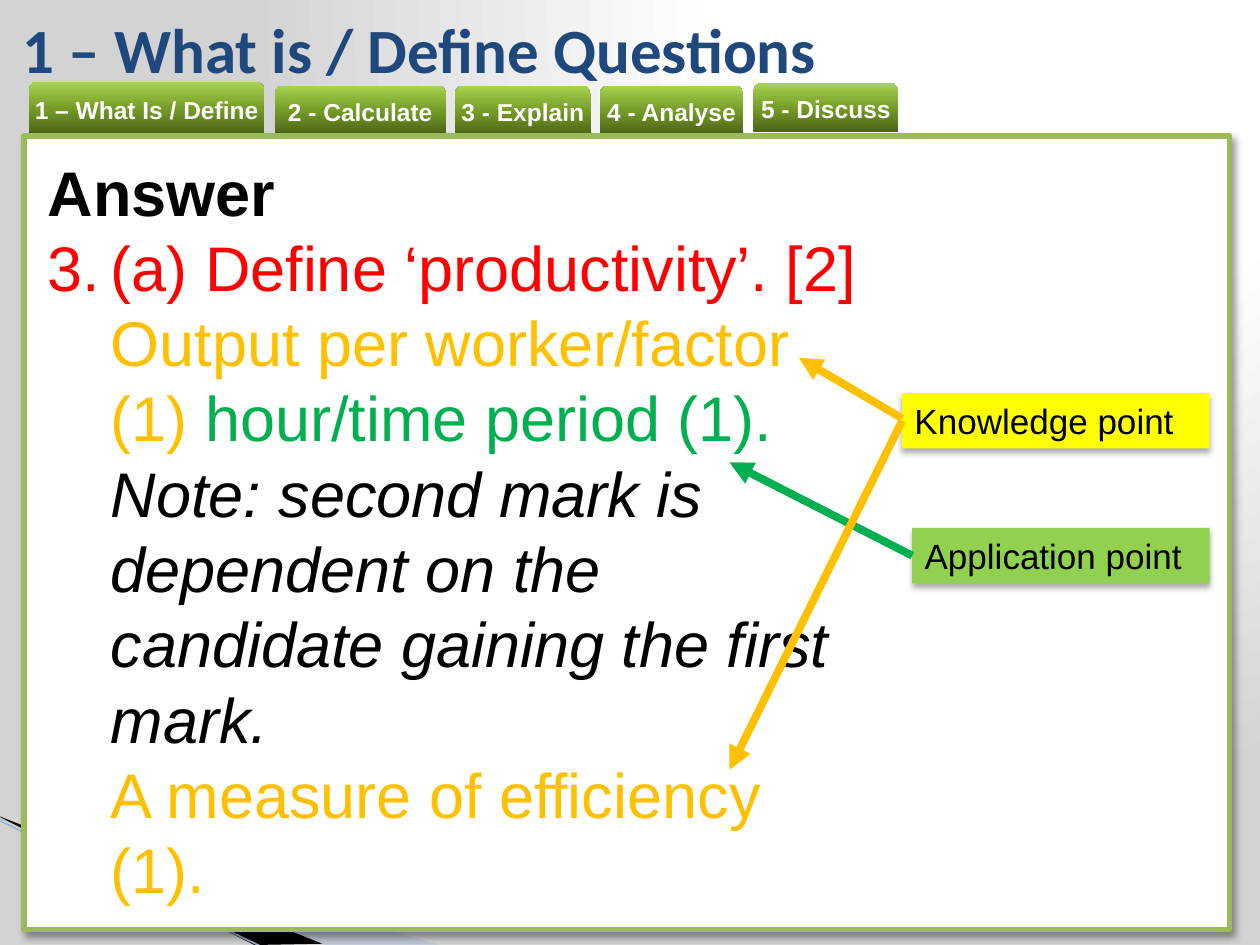
from lxml.etree import SubElement
from pptx import Presentation
from pptx.dml.color import RGBColor
from pptx.enum.shapes import MSO_CONNECTOR, MSO_SHAPE
from pptx.enum.text import MSO_ANCHOR, MSO_AUTO_SIZE, PP_ALIGN
from pptx.oxml.ns import qn
from pptx.util import Inches, Pt

WHITE = RGBColor(0xFF, 0xFF, 0xFF)
BLACK = RGBColor(0, 0, 0)
RED = RGBColor(0xFF, 0, 0)
AMBER = RGBColor(0xFF, 0xC0, 0)
GREEN = RGBColor(0, 0xB0, 0x50)
YELLOW = RGBColor(0xFF, 0xFF, 0)
LIME = RGBColor(0x92, 0xD0, 0x50)
BORDER = RGBColor(0x9B, 0xBB, 0x59)
NAVY = RGBColor(0x1F, 0x49, 0x7D)
PALE_BLUE = RGBColor(0xA7, 0xB9, 0xDB)
EDGE_BLUE = RGBColor(0x9E, 0xB3, 0xD6)
GREY = RGBColor(0xD3, 0xD3, 0xD3)
TAB_STOPS = [(0, RGBColor(0x4A, 0x63, 0x16)), (50, RGBColor(0x76, 0x9C, 0x27)),
             (70, RGBColor(0x89, 0xB1, 0x37)), (100, RGBColor(0xA9, 0xD6, 0x51))]
BACK_STOPS = [(0, WHITE), (40, WHITE), (100, GREY)]

TABS = [("1 – What Is / Define", 0.23, 0.65, 1.87, 0.42),
        ("2 - Calculate", 2.18, 0.68, 1.36, 0.39),
        ("3 - Explain", 3.61, 0.68, 1.08, 0.4),
        ("4 - Analyse", 4.76, 0.68, 1.14, 0.39),
        ("5 - Discuss", 5.98, 0.66, 1.15, 0.39)]
ANSWER = [[("(a) Define ‘productivity’. [2]", RED, False)],
          [("Output per worker/factor (1) ", AMBER, False),
           ("hour/time period (1).", GREEN, False)],
          [("Note: second mark is dependent on the candidate gaining the first mark.",
            BLACK, True)],
          [("A measure of efficiency (1).", AMBER, False)]]
CALLOUTS = [("Knowledge point", 7.16, 3.12, 2.44, YELLOW),
            ("Application point", 7.24, 4.19, 2.36, LIME)]
ARROWS = [((7.16, 3.32), (6.34, 2.84), AMBER),
          ((7.24, 4.41), (5.79, 3.67), GREEN),
          ((7.16, 3.34), (5.79, 6.11), AMBER)]


def set_gradient(fill, element, stops):
    """Give a fill its colour stops and return the emptied gradient element."""
    fill.gradient()
    grad = element.find(".//" + qn("a:gradFill"))
    for child in list(grad):
        grad.remove(child)
    gs_list = SubElement(grad, qn("a:gsLst"))
    for pos, color in stops:
        gs = SubElement(gs_list, qn("a:gs"), pos=str(pos * 1000))
        SubElement(gs, qn("a:srgbClr"), val=str(color))
    return grad


def add_background(s):
    """Shade the slide from white at the top right to grey."""
    grad = set_gradient(s.background.fill, s._element, BACK_STOPS)
    way = SubElement(grad, qn("a:path"), path="circle")
    SubElement(way, qn("a:fillToRect"), l="65000", t="0", r="0", b="98000")


def add_shadow(sp, alpha, blur, dist, angle):
    """Add an outer shadow in black."""
    effects = sp._element.spPr.find(qn("a:effectLst"))
    shadow = SubElement(effects, qn("a:outerShdw"), blurRad=str(Pt(blur)),
                        dist=str(Pt(dist)), dir=str(angle * 60000), rotWithShape="0")
    color = SubElement(shadow, qn("a:srgbClr"), val="000000")
    SubElement(color, qn("a:alpha"), val=str(alpha * 1000))


def add_run(p, text, size, color, bold=False, italic=False, font="Arial"):
    """Add one formatted run to a paragraph."""
    r = p.add_run()
    r.text = text
    r.font.name, r.font.size = font, Pt(size)
    r.font.bold, r.font.italic = bold, italic
    r.font.color.rgb = color


def add_box(s, shape, x, y, w, h, color=None):
    """Add a preset shape with no outline and no shadow."""
    sp = s.shapes.add_shape(shape, Inches(x), Inches(y), Inches(w), Inches(h))
    sp.shadow.inherit = False
    sp.line.fill.background()
    if color is not None:
        sp.fill.solid()
        sp.fill.fore_color.rgb = color
    return sp


def add_wedge(s, points, color, alpha=100):
    """Add a filled corner wedge through the given points."""
    start, *rest = [(Inches(x), Inches(y)) for x, y in points]
    builder = s.shapes.build_freeform(*start)
    builder.add_line_segments(rest, close=True)
    sp = builder.convert_to_shape()
    sp.shadow.inherit = False
    sp.line.fill.background()
    sp.fill.solid()
    sp.fill.fore_color.rgb = color
    if alpha < 100:
        clr = sp._element.spPr.find(".//" + qn("a:srgbClr"))
        SubElement(clr, qn("a:alpha"), val=str(alpha * 1000))


def add_line(s, start, end, color, width, arrow=False):
    """Add a straight line, with an arrowhead at its end if asked."""
    x1, y1, x2, y2 = [Inches(v) for v in start + end]
    line = s.shapes.add_connector(MSO_CONNECTOR.STRAIGHT, x1, y1, x2, y2)
    line.line.color.rgb = color
    line.line.width = Pt(width)
    sp_pr = line._element.spPr
    if arrow:
        SubElement(sp_pr.find(qn("a:ln")), qn("a:tailEnd"), type="triangle")
    SubElement(sp_pr, qn("a:effectLst"))


def add_tab(s, label, x, y, w, h):
    """Add a green tab with its label."""
    sp = add_box(s, MSO_SHAPE.ROUND_2_SAME_RECTANGLE, x, y, w, h)
    grad = set_gradient(sp.fill, sp._element.spPr, TAB_STOPS)
    SubElement(grad, qn("a:lin"), ang=str(270 * 60000), scaled="0")
    tf = sp.text_frame
    tf.margin_left = tf.margin_right = tf.margin_top = tf.margin_bottom = 0
    tf.word_wrap = False
    tf.vertical_anchor = MSO_ANCHOR.MIDDLE
    p = tf.paragraphs[0]
    p.alignment = PP_ALIGN.CENTER
    add_run(p, label, 14, WHITE, bold=True)


def add_panel(s):
    """Add the white content panel."""
    sp = add_box(s, MSO_SHAPE.RECTANGLE, 0.19, 1.08, 9.57, 6.3, WHITE)
    sp.line.color.rgb = BORDER
    sp.line.width = Pt(3)
    add_shadow(sp, 40, 4, 3, 45)


def add_text_frame(s, x, y, w, h):
    """Add a wrapping text box and return its text frame."""
    tf = s.shapes.add_textbox(Inches(x), Inches(y), Inches(w), Inches(h)).text_frame
    tf.word_wrap = True
    return tf


def add_answer(s):
    """Add the heading and the numbered answer."""
    tf = add_text_frame(s, 0.28, 1.17, 6.69, 6.16)
    heading = tf.paragraphs[0]
    add_run(heading, "Answer", 36, BLACK, bold=True)
    p = tf.add_paragraph()
    p_pr = p._p.get_or_add_pPr()
    p_pr.set("marL", str(Inches(0.5)))
    p_pr.set("indent", str(Inches(-0.5)))
    SubElement(p_pr, qn("a:buFont"), typeface="+mj-lt")
    SubElement(p_pr, qn("a:buAutoNum"), type="arabicPeriod", startAt="3")
    for i, line in enumerate(ANSWER):
        if i:
            p.add_line_break()
        for text, color, italic in line:
            add_run(p, text, 36, color, italic=italic)
    heading.line_spacing = p.line_spacing = Pt(43)


def add_title(s):
    """Add the slide title."""
    tf = add_text_frame(s, 0.08, 0.08, 9.69, 0.6)
    tf.vertical_anchor = MSO_ANCHOR.MIDDLE
    add_run(tf.paragraphs[0], "1 – What is / Define Questions", 36, NAVY,
            bold=True, font="Calibri")


def add_callout(s, text, x, y, w, color):
    """Add a coloured label with a soft shadow."""
    sp = add_box(s, MSO_SHAPE.RECTANGLE, x, y, w, 0.44, color)
    add_shadow(sp, 32, 3.5, 2.2, 90)
    tf = sp.text_frame
    tf.word_wrap = True
    tf.auto_size = MSO_AUTO_SIZE.SHAPE_TO_FIT_TEXT
    tf.vertical_anchor = MSO_ANCHOR.TOP
    p = tf.paragraphs[0]
    p.alignment = PP_ALIGN.LEFT
    add_run(p, text, 20, BLACK)


def main():
    """Build the slide and save it."""
    prs = Presentation()
    prs.slide_width, prs.slide_height = Inches(10), Inches(7.5)
    s = prs.slides.add_slide(prs.slide_layouts[6])
    add_background(s)
    add_wedge(s, [(-0.01, 6.5), (3.49, 7.5), (2.59, 7.5), (-0.01, 6.49)], PALE_BLUE, 40)
    add_wedge(s, [(0, 6.48), (2.56, 7.49), (2.02, 7.5), (0.01, 6.49)], BLACK)
    add_line(s, (-0.01, 6.51), (2.09, 7.52), EDGE_BLUE, 0.95)
    for tab in TABS[:-1]:
        add_tab(s, *tab)
    add_panel(s)
    add_tab(s, *TABS[-1])
    add_answer(s)
    add_title(s)
    for callout in CALLOUTS:
        add_callout(s, *callout)
    for start, end, color in ARROWS:
        add_line(s, start, end, color, 4.5, arrow=True)
    prs.save("out.pptx")


if __name__ == "__main__":
    main()
